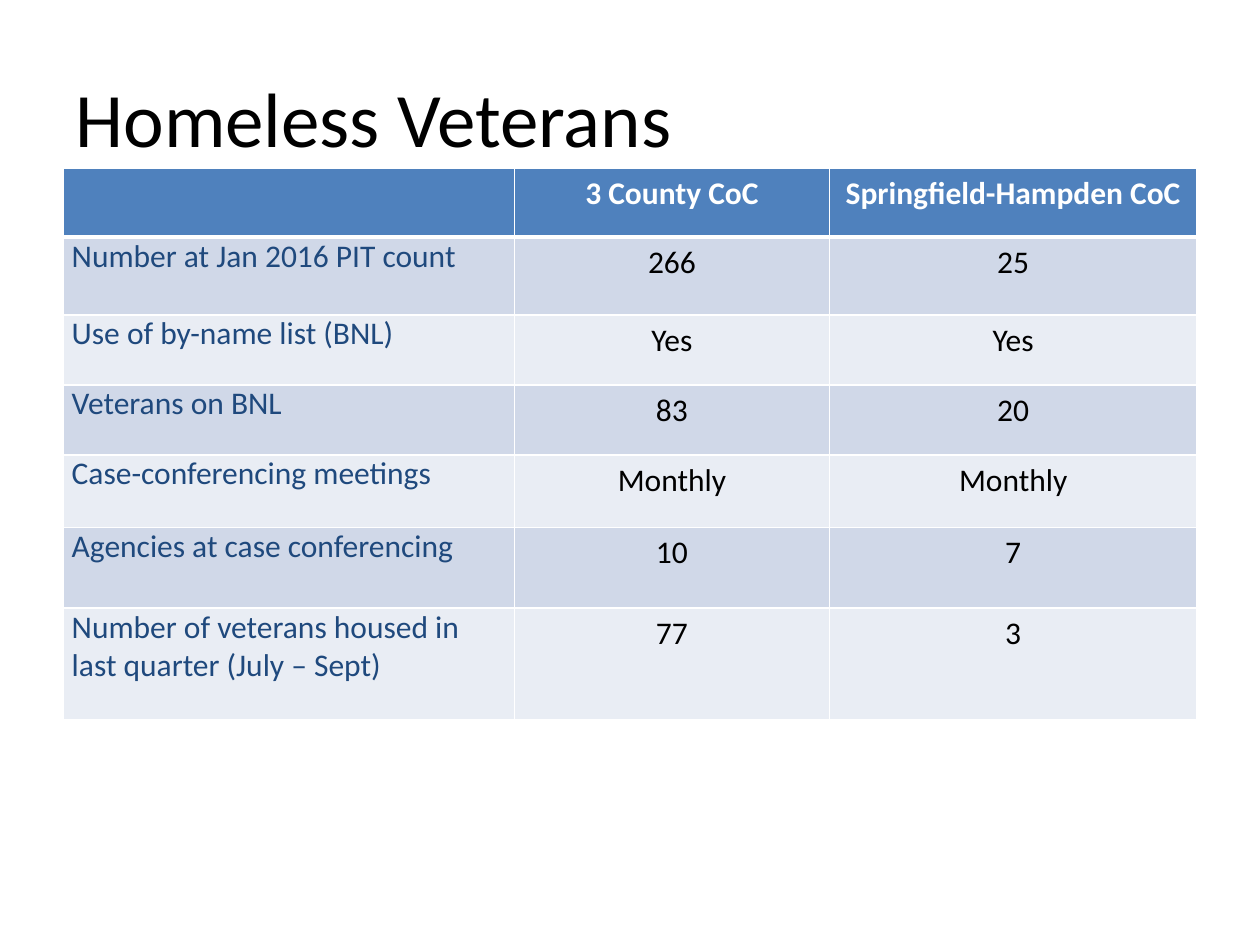
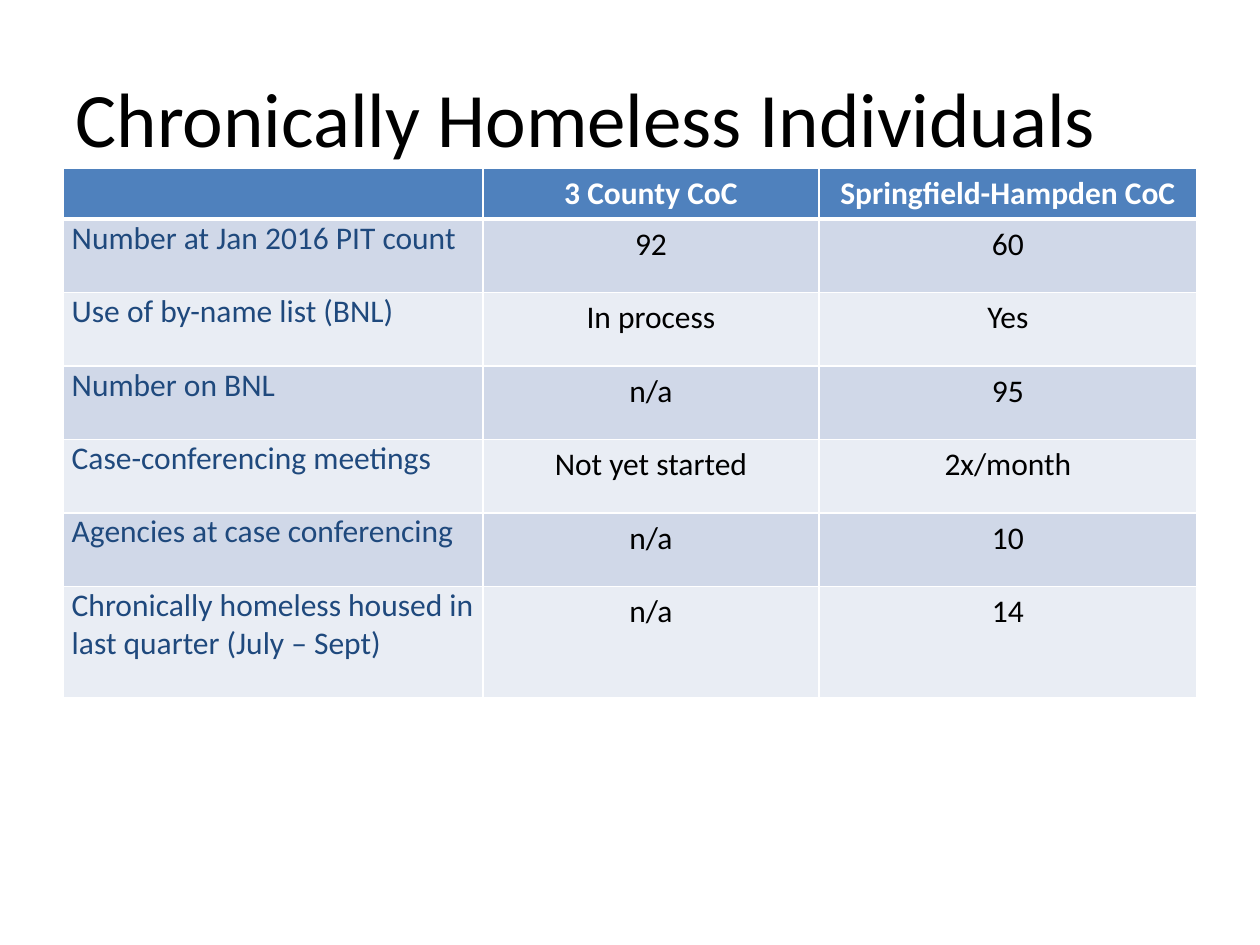
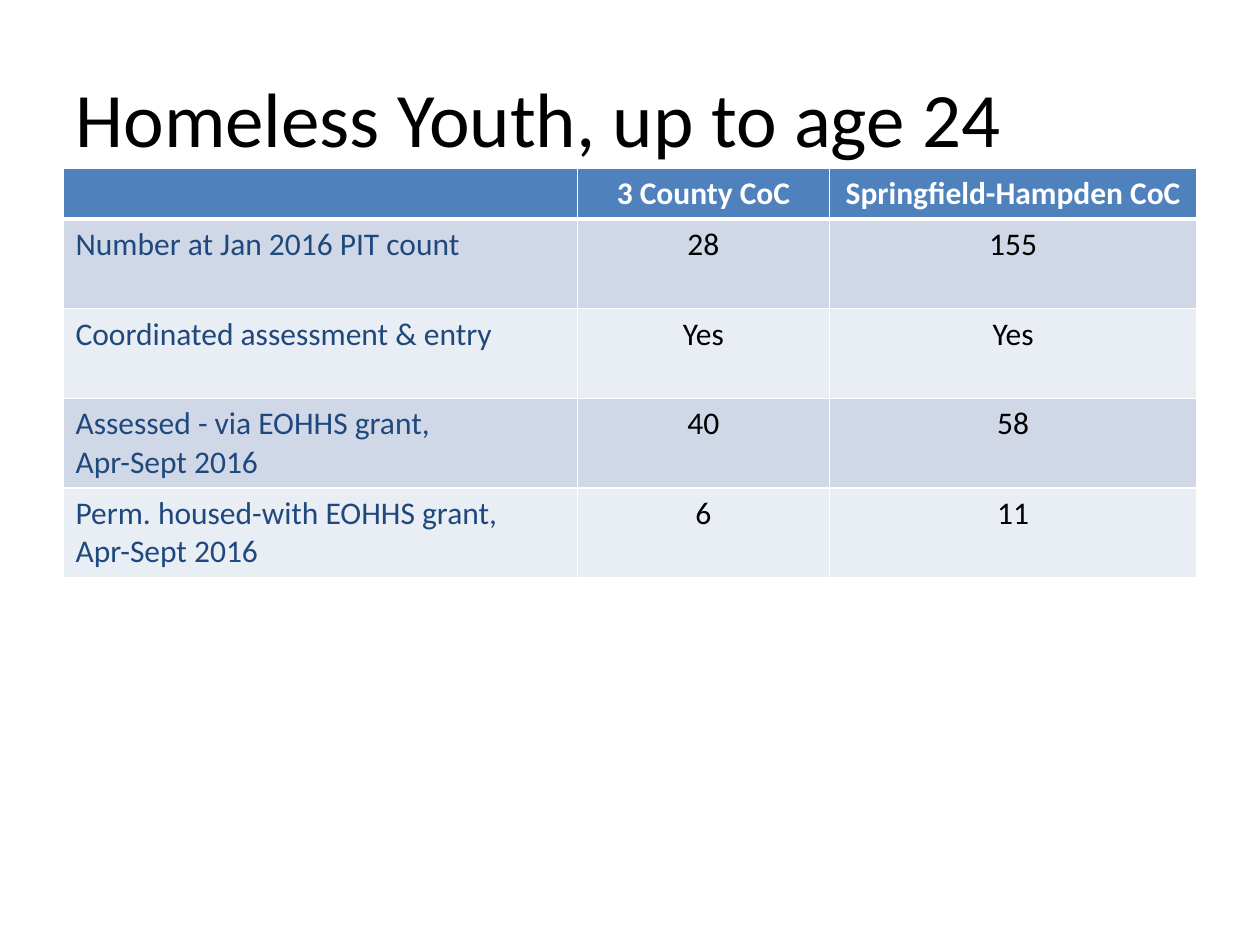
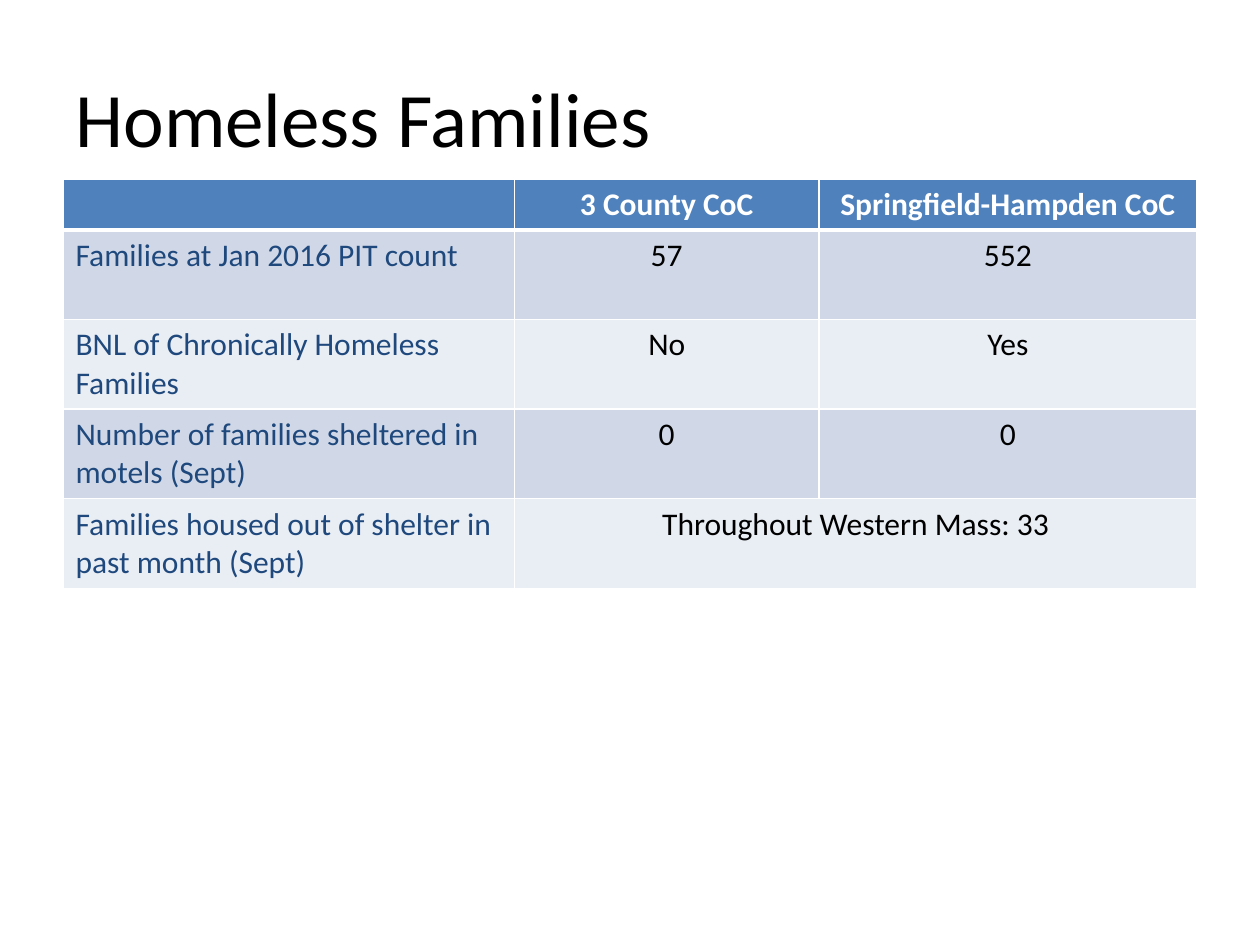
from dataclasses import dataclass

from lxml import etree
from pptx import Presentation
from pptx.dml.color import RGBColor
from pptx.enum import text as text_enums
from pptx.oxml import ns
from pptx.util import Pt

COLORS = {
    "title": "000000",
    "header": "4F81BD",
    "header_text": "FFFFFF",
    "label": "1F497D",
    "value": "000000",
    "dark_band": "D0D8E8",
    "light_band": "E9EDF4",
    "border": "FFFFFF",
}
FONT = "Calibri"
LEFT, WIDTH = 36, 648
TITLE_BOX = {"left": Pt(LEFT), "top": Pt(21.6), "width": Pt(WIDTH), "height": Pt(90)}
TIGHT_MARGINS = {"margin_left": Pt(5), "margin_right": Pt(5),
                 "margin_top": Pt(0), "margin_bottom": Pt(0)}
HEADINGS = ("", "3 County CoC", "Springfield-Hampden CoC")
ALIGN = text_enums.PP_ALIGN
THIN, THICK = 1, 3


@dataclass(frozen=True)
class Comparison:
    """One slide; a row with a single value spreads it over both value columns."""
    title: str
    columns: tuple[float, ...]
    heights: tuple[float, ...]
    rows: tuple[tuple[str, ...], ...]
    top: float = 96
    tight_labels: bool = False


COMPARISONS = (
    Comparison(
        "Homeless Veterans", (258, 180, 210), (39.5, 44.5, 40, 40, 41.5, 46, 64),
        (
            ("Number at Jan 2016 PIT count", "266", "25"),
            ("Use of by-name list (BNL)", "Yes", "Yes"),
            ("Veterans on BNL", "83", "20"),
            ("Case-conferencing meetings", "Monthly", "Monthly"),
            ("Agencies at case conferencing", "10", "7"),
            ("Number of veterans housed in last quarter (July – Sept)", "77", "3"),
        ),
        tight_labels=True,
    ),
    Comparison(
        "Chronically Homeless Individuals", (240, 192, 216), (29, *[42] * 5, 63.5),
        (
            ("Number at Jan 2016 PIT count", "92", "60"),
            ("Use of by-name list (BNL)", "In process", "Yes"),
            ("Number on BNL", "n/a", "95"),
            ("Case-conferencing meetings", "Not yet started", "2x/month"),
            ("Agencies at case conferencing", "n/a", "10"),
            ("Chronically homeless housed in last quarter (July – Sept)", "n/a", "14"),
        ),
        tight_labels=True,
    ),
    Comparison(
        "Homeless Youth, up to age 24", (294, 144, 210), (29, *[51.2] * 4),
        (
            ("Number at Jan 2016 PIT count", "28", "155"),
            ("Coordinated assessment & entry", "Yes", "Yes"),
            ("Assessed - via EOHHS grant,\nApr-Sept 2016", "40", "58"),
            ("Perm. housed-with EOHHS grant,\nApr-Sept 2016", "6", "11"),
        ),
    ),
    Comparison(
        "Homeless Families", (258, 174, 216), (29, *[51.2] * 4),
        (
            ("Families at Jan 2016 PIT count", "57", "552"),
            ("BNL of Chronically Homeless Families", "No", "Yes"),
            ("Number of families sheltered in motels (Sept)", "0", "0"),
            ("Families housed out of shelter in past month (Sept)",
             "Throughout Western Mass: 33"),
        ),
        top=102.2,
    ),
)


def set_attributes(target, values: dict) -> None:
    for name, value in values.items():
        setattr(target, name, value)


def format_text(frame, size: float, color: str, alignment, bold: bool = False) -> None:
    for paragraph in frame.paragraphs:
        paragraph.alignment = alignment
        set_attributes(paragraph.font, {"name": FONT, "size": Pt(size), "bold": bold})
        paragraph.font.color.rgb = RGBColor.from_string(COLORS[color])


def add_borders(cell, row: int) -> None:
    """Outline a cell in white, with a thicker rule under the header row."""
    widths = {"L": THIN, "R": THIN,
              "T": THICK if row == 1 else THIN, "B": THICK if row == 0 else THIN}
    properties = cell._tc.get_or_add_tcPr()
    for side, width in widths.items():
        line = etree.SubElement(properties, ns.qn(f"a:ln{side}"), w=str(Pt(width)))
        fill = etree.SubElement(line, ns.qn("a:solidFill"))
        etree.SubElement(fill, ns.qn("a:srgbClr"), val=COLORS["border"])


def format_cell(cell, row: int, column: int, tight_labels: bool) -> None:
    is_header, is_label = row == 0, column == 0
    band = "header" if is_header else "dark_band" if row % 2 else "light_band"
    color = "header_text" if is_header else "label" if is_label else "value"
    add_borders(cell, row)
    cell.fill.solid()
    cell.fill.fore_color.rgb = RGBColor.from_string(COLORS[band])
    if tight_labels and is_label and not is_header:
        set_attributes(cell, TIGHT_MARGINS)
    format_text(cell.text_frame, 18, color,
                ALIGN.LEFT if is_label else ALIGN.CENTER, bold=is_header)


def add_title(slide, title: str) -> None:
    shape = slide.shapes.title
    set_attributes(shape, TITLE_BOX)
    shape.text_frame.text = title
    shape.text_frame.vertical_anchor = text_enums.MSO_ANCHOR.MIDDLE
    format_text(shape.text_frame, 44, "title", ALIGN.LEFT)


def add_comparison_table(slide, comparison: Comparison) -> None:
    rows = (HEADINGS, *comparison.rows)
    table = slide.shapes.add_table(
        len(rows), len(HEADINGS), Pt(LEFT), Pt(comparison.top),
        Pt(WIDTH), Pt(sum(comparison.heights))).table
    for column, width in zip(table.columns, comparison.columns):
        column.width = Pt(width)
    for row, height in zip(table.rows, comparison.heights):
        row.height = Pt(height)
    for row, values in enumerate(rows):
        for column, value in enumerate(values):
            table.cell(row, column).text = value
        for column in range(len(HEADINGS)):
            format_cell(table.cell(row, column), row, column, comparison.tight_labels)
        if len(values) < len(HEADINGS):
            table.cell(row, len(values) - 1).merge(table.cell(row, len(HEADINGS) - 1))


def main() -> None:
    presentation = Presentation()
    set_attributes(presentation, {"slide_width": Pt(720), "slide_height": Pt(540)})
    title_only = presentation.slide_layouts.get_by_name("Title Only")
    for comparison in COMPARISONS:
        slide = presentation.slides.add_slide(title_only)
        add_title(slide, comparison.title)
        add_comparison_table(slide, comparison)
    presentation.save("out.pptx")


if __name__ == "__main__":
    main()
